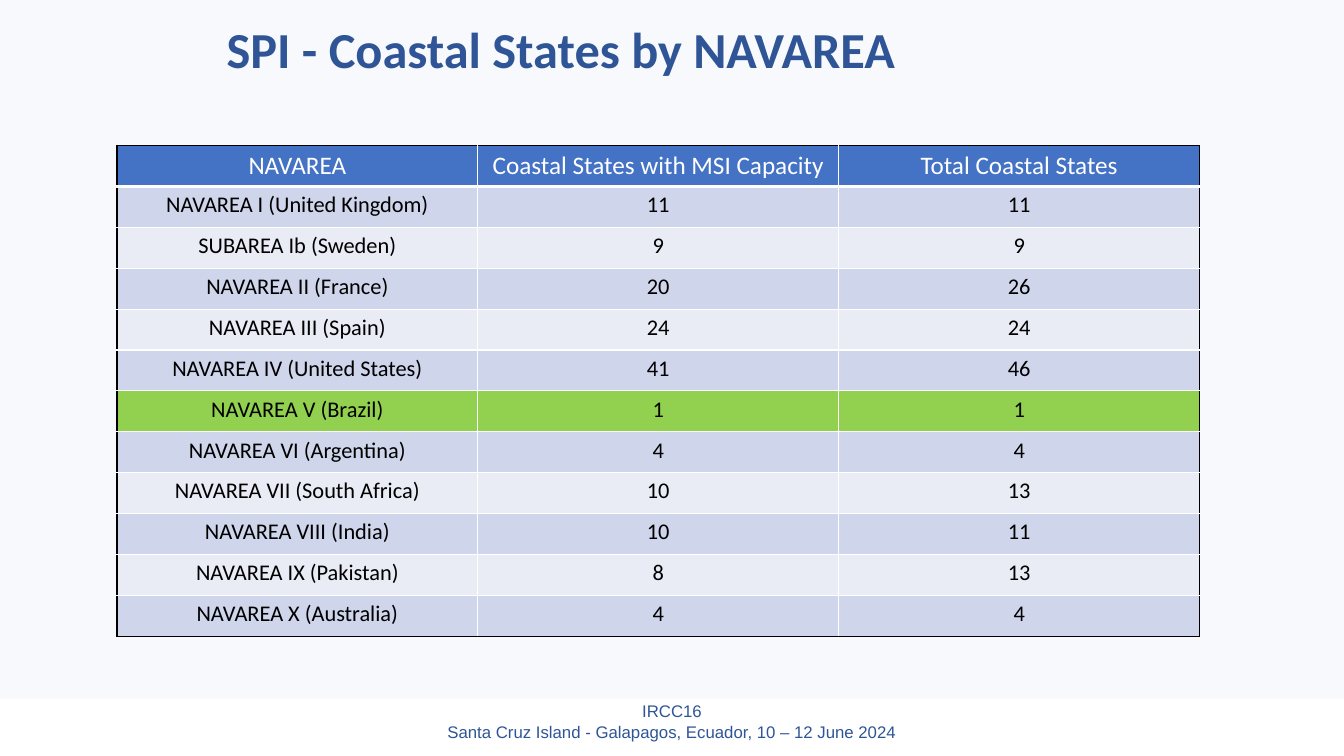
"""Build the slide listing coastal states by NAVAREA."""
from dataclasses import dataclass

import pptx
import pptx.dml.color
import pptx.enum.shapes
import pptx.enum.text
import pptx.oxml.ns
import pptx.presentation
import pptx.slide
import pptx.table
import pptx.text.text
import pptx.util
from lxml import etree

Pt = pptx.util.Pt
RGBColor = pptx.dml.color.RGBColor
PP_ALIGN = pptx.enum.text.PP_ALIGN
qn = pptx.oxml.ns.qn

WHITE = RGBColor(0xFF, 0xFF, 0xFF)
BLACK = RGBColor(0x00, 0x00, 0x00)
NAVY = RGBColor(0x2F, 0x55, 0x97)
PALE_BLUE = RGBColor(0xDA, 0xE3, 0xF3)
HEADER_BLUE = RGBColor(0x44, 0x72, 0xC4)
BAND_DARK = RGBColor(0xCF, 0xD5, 0xEA)
BAND_LIGHT = RGBColor(0xE9, 0xEB, 0xF5)
HIGHLIGHT_GREEN = RGBColor(0x92, 0xD0, 0x50)

SLIDE_WIDTH, SLIDE_HEIGHT = 960, 540
BACKDROP_HEIGHT = 499
TABLE_LEFT, TABLE_TOP = 83.5, 104
COLUMN_WIDTH, ROW_HEIGHT = 257.8, 29.2
HEADINGS = ("NAVAREA", "Coastal States with MSI Capacity", "Total Coastal States")


@dataclass(frozen=True)
class Area:
    name: str
    with_capacity: int
    total: int
    highlighted: bool = False


@dataclass(frozen=True)
class Caption:
    text: str
    left: float
    top: float
    width: float
    height: float
    font: str
    size: float
    bold: bool
    align: PP_ALIGN
    line_spacing: float


AREAS = (
    Area("NAVAREA I (United Kingdom)", 11, 11),
    Area("SUBAREA Ib (Sweden)", 9, 9),
    Area("NAVAREA II (France)", 20, 26),
    Area("NAVAREA III (Spain)", 24, 24),
    Area("NAVAREA IV (United States)", 41, 46),
    Area("NAVAREA V (Brazil)", 1, 1, highlighted=True),
    Area("NAVAREA VI (Argentina)", 4, 4),
    Area("NAVAREA VII (South Africa)", 10, 13),
    Area("NAVAREA VIII (India)", 10, 11),
    Area("NAVAREA IX (Pakistan)", 8, 13),
    Area("NAVAREA X (Australia)", 4, 4),
)

FOOTER = Caption(
    "IRCC16\vSanta Cruz Island - Galapagos, Ecuador, 10 – 12 June 2024",
    271.5, 499, 417, 32.4, "Arial", 12, False, PP_ALIGN.CENTER, 1.0,
)
TITLE = Caption(
    "SPI - Coastal States by NAVAREA",
    154.8, 15.8, 739.4, 43.2, "Calibri", 36, True, PP_ALIGN.LEFT, 0.9,
)


def format_paragraph(
    paragraph: pptx.text.text._Paragraph, font: str, size: float,
    color: RGBColor, align: PP_ALIGN, bold: bool = False,
) -> None:
    paragraph.alignment = align
    for run in paragraph.runs:
        run.font.name = font
        run.font.size = Pt(size)
        run.font.bold = bold
        run.font.color.rgb = color


def add_caption(slide: pptx.slide.Slide, caption: Caption) -> None:
    box = slide.shapes.add_textbox(
        Pt(caption.left), Pt(caption.top), Pt(caption.width), Pt(caption.height)
    )
    frame = box.text_frame
    frame.word_wrap = True
    frame.vertical_anchor = pptx.enum.text.MSO_ANCHOR.MIDDLE
    frame.text = caption.text
    paragraph = frame.paragraphs[0]
    paragraph.line_spacing = caption.line_spacing
    format_paragraph(
        paragraph, caption.font, caption.size, NAVY, caption.align, caption.bold
    )


def add_backdrop(slide: pptx.slide.Slide) -> None:
    backdrop = slide.shapes.add_shape(
        pptx.enum.shapes.MSO_SHAPE.RECTANGLE,
        Pt(0), Pt(0), Pt(SLIDE_WIDTH), Pt(BACKDROP_HEIGHT),
    )
    backdrop.shadow.inherit = False
    backdrop.line.fill.background()
    backdrop.fill.solid()
    backdrop.fill.fore_color.rgb = PALE_BLUE
    tint = backdrop._element.spPr.find(qn("a:solidFill")).find(qn("a:srgbClr"))
    etree.SubElement(tint, qn("a:alpha"), val="21000")


def add_border(
    cell: pptx.table._Cell, side: str, color: RGBColor, width: float
) -> None:
    properties = cell._tc.get_or_add_tcPr()
    line = etree.SubElement(properties, qn(f"a:ln{side}"), w=str(Pt(width)))
    fill = etree.SubElement(line, qn("a:solidFill"))
    etree.SubElement(fill, qn("a:srgbClr"), val=str(color))


def row_fill(row: int) -> RGBColor:
    if row == 0:
        return HEADER_BLUE
    if AREAS[row - 1].highlighted:
        return HIGHLIGHT_GREEN
    return BAND_DARK if row % 2 else BAND_LIGHT


def add_area_table(slide: pptx.slide.Slide) -> None:
    rows = [HEADINGS] + [(a.name, a.with_capacity, a.total) for a in AREAS]
    last_row, last_column = len(rows) - 1, len(HEADINGS) - 1
    table = slide.shapes.add_table(
        len(rows), len(HEADINGS), Pt(TABLE_LEFT), Pt(TABLE_TOP),
        Pt(COLUMN_WIDTH * len(HEADINGS)), Pt(ROW_HEIGHT * len(rows)),
    ).table
    for column in table.columns:
        column.width = Pt(COLUMN_WIDTH)
    for row, values in enumerate(rows):
        table.rows[row].height = Pt(ROW_HEIGHT)
        is_header = row == 0
        for column, value in enumerate(values):
            cell = table.cell(row, column)
            outer_edges = {
                "L": column == 0,
                "R": column == last_column,
                "T": is_header,
                "B": row == last_row,
            }
            for side, is_outer in outer_edges.items():
                width = 3 if is_header and side == "B" else 1
                add_border(cell, side, BLACK if is_outer else WHITE, width)
            cell.fill.solid()
            cell.fill.fore_color.rgb = row_fill(row)
            cell.text_frame.text = str(value)
            format_paragraph(
                cell.text_frame.paragraphs[0], "Calibri",
                18 if is_header else 16,
                WHITE if is_header else BLACK, PP_ALIGN.CENTER,
            )


def main() -> None:
    presentation = pptx.Presentation()
    presentation.slide_width = Pt(SLIDE_WIDTH)
    presentation.slide_height = Pt(SLIDE_HEIGHT)
    slide = presentation.slides.add_slide(presentation.slide_layouts[6])
    add_caption(slide, FOOTER)
    add_backdrop(slide)
    add_caption(slide, TITLE)
    add_area_table(slide)
    presentation.save("out.pptx")


if __name__ == "__main__":
    main()
